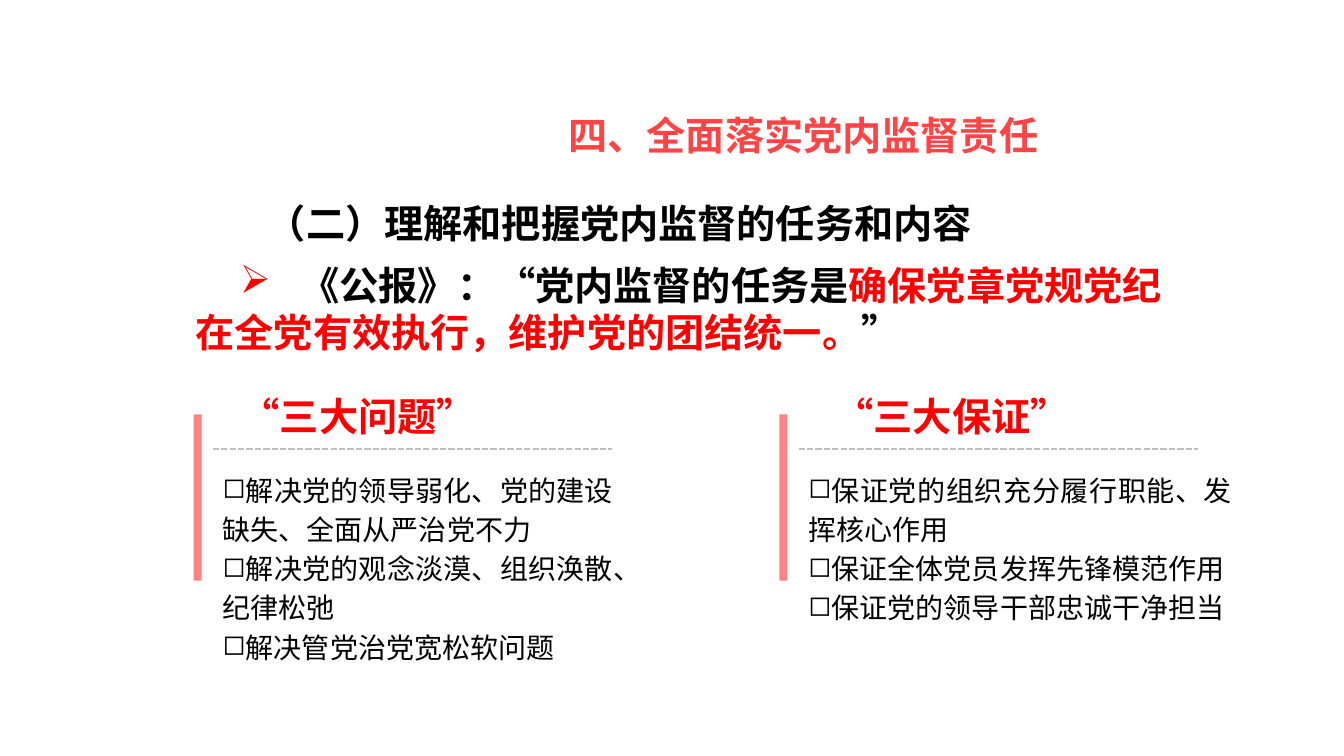
from dataclasses import dataclass

from lxml.etree import SubElement
from pptx import Presentation
from pptx.dml.color import RGBColor
from pptx.enum.dml import MSO_LINE_DASH_STYLE as Dash
from pptx.enum.lang import MSO_LANGUAGE_ID as Language
from pptx.enum.shapes import MSO_CONNECTOR as Connector, MSO_SHAPE as Shape
from pptx.enum.text import PP_ALIGN as Align
from pptx.oxml.ns import qn
from pptx.util import Inches, Pt


@dataclass(frozen=True)
class Theme:
    font: str = "Noto Sans CJK SC"
    text: str = "000000"
    accent: str = "FF0000"
    bar: str = "FF8383"
    rule: str = "BFBFBF"
    title: tuple = ("FE4444", "832B2B")
    heading_size: int = 28
    body_size: int = 20
    body_spacing: int = 28


class SlideBuilder:
    def __init__(self, slide, theme):
        self.shapes = slide.shapes
        self.theme = theme

    def text_box(self, left, top, width, height, side_inset=0.1):
        frame = self.shapes.add_textbox(
            Inches(left), Inches(top), Inches(width), Inches(height)).text_frame
        frame.word_wrap = True
        frame.margin_left = frame.margin_right = Inches(side_inset)
        return frame

    def run(self, paragraph, text, color=None, size=None, bold=True):
        """Add a run; a pair of colours gives a downward gradient."""
        run = paragraph.add_run()
        run.text = text
        font = run.font
        font.name = self.theme.font
        font.size = Pt(size or self.theme.heading_size)
        font.bold = bold
        font.language_id = Language.SIMPLIFIED_CHINESE
        color = color or self.theme.text
        if isinstance(color, tuple):
            font.fill.gradient()
            font.fill.gradient_angle = 270
            for stop, value in zip(font.fill.gradient_stops, color):
                stop.color.rgb = RGBColor.from_string(value)
        else:
            font.fill.solid()
            font.fill.fore_color.rgb = RGBColor.from_string(color)
        SubElement(font._element, qn("a:ea"), typeface=self.theme.font)

    def bullet(self, paragraph, character, color=None, indent=0, tab=None):
        properties = paragraph._p.get_or_add_pPr()
        properties.set("marL", "0")
        properties.set("indent", str(Inches(indent)))
        if color:
            bullet_color = SubElement(properties, qn("a:buClr"))
            SubElement(bullet_color, qn("a:srgbClr"), val=color)
        SubElement(properties, qn("a:buChar"), char=character)
        if tab:
            tabs = SubElement(properties, qn("a:tabLst"))
            SubElement(tabs, qn("a:tab"), pos=str(Inches(tab)), algn="l")

    def heading(self, text, left, top, width, color=None):
        frame = self.text_box(left, top, width, 0.57)
        self.run(frame.paragraphs[0], text, color)

    def quotation(self, pieces, left, top, width, height):
        paragraph = self.text_box(left, top, width, height, 0.33).paragraphs[0]
        self.bullet(paragraph, "➢", self.theme.accent, indent=0.44, tab=1.04)
        for text, color in pieces:
            self.run(paragraph, text, color)

    def bar(self, left, top, width, height):
        shape = self.shapes.add_shape(
            Shape.RECTANGLE, Inches(left), Inches(top), Inches(width), Inches(height))
        shape.shadow.inherit = False
        shape.fill.solid()
        shape.fill.fore_color.rgb = RGBColor.from_string(self.theme.bar)
        shape.line.fill.background()

    def dashed_rule(self, left, top, width):
        rule = self.shapes.add_connector(
            Connector.STRAIGHT, Inches(left), Inches(top), Inches(left + width), Inches(top))
        rule.line.color.rgb = RGBColor.from_string(self.theme.rule)
        rule.line.width = Pt(1.5)
        rule.line.dash_style = Dash.SQUARE_DOT
        SubElement(rule._element.spPr, qn("a:effectLst"))

    def bullet_list(self, items, left, top, width, height):
        frame = self.text_box(left, top, width, height)
        for index, item in enumerate(items):
            paragraph = frame.add_paragraph() if index else frame.paragraphs[0]
            paragraph.alignment = Align.JUSTIFY
            paragraph.line_spacing = Pt(self.theme.body_spacing)
            self.bullet(paragraph, "◻")
            self.run(paragraph, item, size=self.theme.body_size, bold=False)

    def column(self, left, heading, heading_left, items, list_width):
        self.bar(left, 4.11, 0.08, 1.65)
        self.dashed_rule(left + 0.19, 4.45, 3.96)
        self.bullet_list(items, left + 0.19, 4.59, list_width, 2.73)
        self.heading(heading, heading_left, 3.84, 2.64, self.theme.accent)


def main():
    presentation = Presentation()
    presentation.slide_width = Inches(13.33)
    presentation.slide_height = Inches(7.5)
    theme = Theme()
    slide = presentation.slides.add_slide(presentation.slide_layouts[6])
    builder = SlideBuilder(slide, theme)

    builder.heading("四、全面落实党内监督责任", 5.54, 1.06, 6.2, theme.title)
    builder.heading("（二）理解和把握党内监督的任务和内容", 2.55, 1.93, 7.43)
    builder.quotation([
        ("\t《公报》：“党内监督的任务是", theme.text),
        ("确保党章党规党纪在全党有效执行，维护党的团结统一。", theme.accent),
        ("”", theme.text),
    ], 1.61, 2.54, 10.39, 1.04)

    builder.column(1.92, "“三大问题”", 2.29, [
        "解决党的领导弱化、党的建设缺失、全面从严治党不力",
        "解决党的观念淡漠、组织涣散、纪律松弛",
        "解决管党治党宽松软问题",
    ], list_width=4.07)
    builder.column(7.73, "“三大保证”", 8.18, [
        "保证党的组织充分履行职能、发挥核心作用",
        "保证全体党员发挥先锋模范作用",
        "保证党的领导干部忠诚干净担当",
    ], list_width=4.4)

    presentation.save("out.pptx")


if __name__ == "__main__":
    main()
